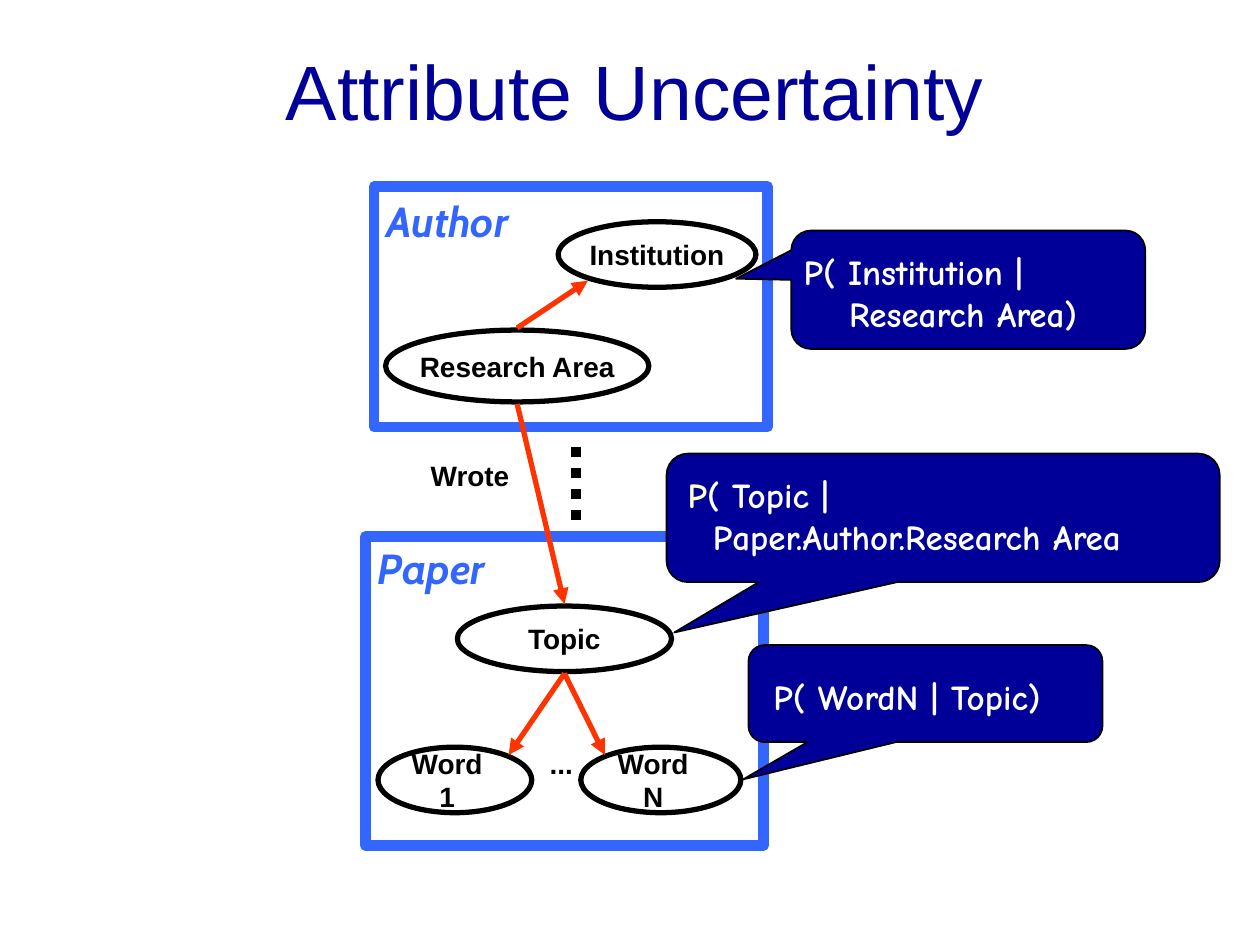
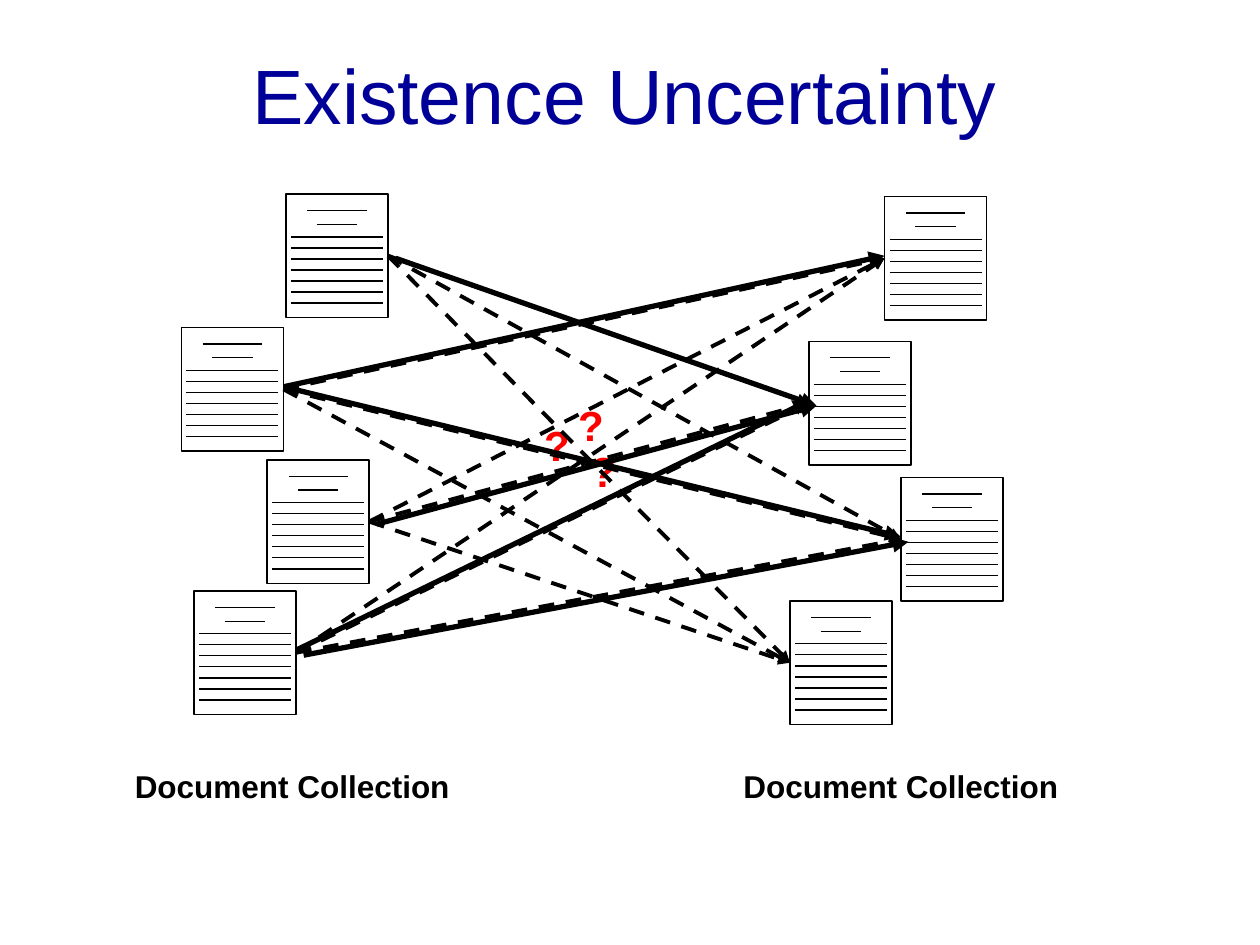
from itertools import permutations

from lxml import etree
from pptx import Presentation
from pptx import util as u
from pptx.dml.color import RGBColor
from pptx.enum import dml, shapes, text
from pptx.oxml.ns import qn

NAVY, BLUE, ORANGE, RED = "000099", "3366FF", "FF3300", "FF0000"
BLACK, WHITE, CREAM = "000000", "FFFFFF", "FFFFCC"
LEFT, CENTER = text.PP_ALIGN.LEFT, text.PP_ALIGN.CENTER
DASH, DOT = dml.MSO_LINE.DASH, dml.MSO_LINE.ROUND_DOT

FRAMES = [
    ("Paper", (2.9, 4.26, 3.16, 2.45), 4.26),
    ("Author", (2.97, 1.48, 3.12, 1.91), 1.5),
]
NODES = {
    "Institution": (4.43, 1.76, 1.57, 0.52),
    "Research Area": (3.06, 2.62, 2.09, 0.57),
    "Topic": (3.63, 4.81, 1.7, 0.52),
    "Word\v1": (3, 5.93, 1.22, 0.52),
    "Word\vN": (4.61, 5.93, 1.27, 0.52),
}
TOP, BOTTOM = (0.5, -0.03), (0.5, 1.03)
DEPENDENCIES = [
    ("Research Area", TOP, "Institution", (0.15, 0.9)),
    ("Research Area", BOTTOM, "Topic", TOP),
    ("Topic", BOTTOM, "Word\v1", (0.85, 0.12)),
    ("Topic", BOTTOM, "Word\vN", (0.15, 0.12)),
]
LABELS = [("Wrote", (3.32, 3.59, 1.16, 0.37), LEFT), ("...", (4.26, 5.88, 0.39, 0.37), CENTER)]
CALLOUTS = [
    ((5.94, 5.12, 2.81, 0.77), (-0.515, 0.884), (6.04, 5.31), ["P( WordN | Topic)"], 0),
    ((5.29, 3.6, 4.39, 1.02), (-0.486, 0.892), (5.36, 3.71),
     ["P( Topic |", "Paper.Author.Research Area"], 0.2),
    ((6.28, 1.83, 2.81, 0.94), (-0.656, -0.093), (6.28, 1.94),
     ["P( Institution |", "Research Area)"], 0.36),
]

PAGE_WIDTH, PAGE_HEIGHT = 0.81, 0.98
LEFT_PAGES = [(2.27, 1.54), (1.44, 2.6), (2.12, 3.65), (1.54, 4.69)]
RIGHT_PAGES = [(7.02, 1.56), (6.42, 2.71), (7.15, 3.79), (6.27, 4.77)]
PAGE_RULES = [(0.13, 0.47), (0.24, 0.32)] + [(0.34 + 0.0875 * row, 0.73) for row in range(7)]
QUESTION_MARKS = [(4.22, 3.28), (4.49, 3.12), (4.59, 3.49)]
COLLECTIONS = [(0.97, "Document Collection"), (5.8, "Document Collection")]
KNOWN_LINKS = [
    ((0.06, 0.02), [(0, 1), (2, 1), (3, 2)]),
    ((0, -0.02), [(1, 0), (1, 2), (3, 1)]),
]


def rgb(color):
    return RGBColor.from_string(color)


def inches(values):
    return [u.Inches(value) for value in values]


def write(shape, lines, size, color, font="Arial", align=CENTER, bold=True, italic=False,
          wrap=False, anchor=text.MSO_ANCHOR.TOP, indent=0):
    frame = shape.text_frame
    frame.text = "\n".join(lines)
    frame.word_wrap = wrap
    frame.vertical_anchor = anchor
    for number, paragraph in enumerate(frame.paragraphs):
        paragraph.alignment = align
        paragraph.font.name, paragraph.font.size = font, u.Pt(size)
        paragraph.font.bold, paragraph.font.italic = bold, italic
        paragraph.font.color.rgb = rgb(color)
        if number and indent:
            paragraph._p.get_or_add_pPr().set("marL", str(u.Inches(indent)))
    return frame


def add_text(slide, box, lines, size, color, **style):
    return write(slide.shapes.add_textbox(*inches(box)), lines, size, color, **style)


def add_box(slide, kind, box, line, width, fill=None):
    shape = slide.shapes.add_shape(kind, *inches(box))
    shape.shadow.inherit = False
    if fill:
        shape.fill.solid()
        shape.fill.fore_color.rgb = rgb(fill)
    else:
        shape.fill.background()
    shape.line.color.rgb = rgb(line)
    shape.line.width = u.Pt(width)
    return shape


def add_line(slide, start, end, color, width, dash=None, arrow=False):
    connector = slide.shapes.add_connector(shapes.MSO_CONNECTOR.STRAIGHT, *inches(start + end))
    connector.line.color.rgb = rgb(color)
    connector.line.width = u.Pt(width)
    if dash:
        connector.line.dash_style = dash
    properties = connector._element.spPr
    if arrow:
        etree.SubElement(properties.find(qn("a:ln")), qn("a:tailEnd"), type="triangle")
    etree.SubElement(properties, qn("a:effectLst"))
    return connector


def add_titled_slide(presentation, title, box):
    slide = presentation.slides.add_slide(presentation.slide_layouts[6])
    add_text(slide, box, [title], 44, NAVY, bold=False, wrap=True, anchor=text.MSO_ANCHOR.MIDDLE)
    return slide


def point_on(box, share):
    left, top, width, height = box
    return left + width * share[0], top + height * share[1]


def build_attribute_slide(presentation):
    slide = add_titled_slide(presentation, "Attribute Uncertainty", (0.33, 0.17, 9.42, 1.08))
    for name, box, label_top in FRAMES:
        add_box(slide, shapes.MSO_SHAPE.RECTANGLE, box, BLUE, 6)
        add_text(slide, (box[0], label_top, 2, 0.5), [name], 24, BLUE, font="Cabin",
                 align=LEFT, italic=True)
    for name, box in NODES.items():
        node = add_box(slide, shapes.MSO_SHAPE.OVAL, box, BLACK, 3)
        frame = write(node, [name], 16, BLACK, anchor=text.MSO_ANCHOR.MIDDLE)
        if "\v" in name:
            frame.margin_right = u.Inches(0.22)
    for label, box, align in LABELS:
        add_text(slide, box, [label], 16, BLACK, align=align)
    add_line(slide, (4.57, 4.13), (4.57, 3.5), BLACK, 6, DOT)
    for source, source_share, target, target_share in DEPENDENCIES:
        add_line(slide, point_on(NODES[source], source_share),
                 point_on(NODES[target], target_share), ORANGE, 3, arrow=True)
    for box, tip, corner, lines, indent in CALLOUTS:
        callout = add_box(slide, shapes.MSO_SHAPE.ROUNDED_RECTANGULAR_CALLOUT, box, BLACK, 1, NAVY)
        callout.adjustments[0], callout.adjustments[1] = tip
        frame = add_text(slide, corner + (box[2] - 0.1, 0.4 * len(lines)), lines, 20, WHITE,
                         font="Comic Neue", align=LEFT, indent=indent)
        if "Topic |" in lines[0]:
            paragraph = frame.paragraphs[0]
            paragraph.runs[0].text = "P"
            paragraph.runs[0].font.color.rgb = rgb(CREAM)
            paragraph.add_run().text = lines[0][1:]


def add_page(slide, corner):
    left, top = corner
    page = add_box(slide, shapes.MSO_SHAPE.RECTANGLE, (left, top, PAGE_WIDTH, PAGE_HEIGHT),
                   BLACK, 0.75, WHITE)
    for offset, width in PAGE_RULES:
        start = left + (PAGE_WIDTH - width) / 2
        add_line(slide, (start, top + offset), (start + width, top + offset), BLACK, 0.75)
    return page


def build_existence_slide(presentation):
    slide = add_titled_slide(presentation, "Existence Uncertainty", (0.25, 0.33, 9.42, 0.83))
    for left, label in COLLECTIONS:
        add_text(slide, (left, 6.04, 2.7, 0.4), [label], 18, BLACK)
    for corner in QUESTION_MARKS:
        add_text(slide, corner + (0.4, 0.5), ["?"], 24, RED)
    sources = [add_page(slide, corner) for corner in LEFT_PAGES]
    targets = [add_page(slide, corner) for corner in RIGHT_PAGES]
    for source, target in permutations(range(len(sources)), 2):
        link = add_line(slide, (0, 0), (1, 1), BLACK, 2.25, DASH, arrow=True)
        link.begin_connect(sources[source], 3)
        link.end_connect(targets[target], 1)
    for (shift_x, shift_y), links in KNOWN_LINKS:
        for source, target in links:
            start_x, start_y = LEFT_PAGES[source]
            end_x, end_y = RIGHT_PAGES[target]
            middle = PAGE_HEIGHT / 2 + shift_y
            add_line(slide, (start_x + PAGE_WIDTH + shift_x, start_y + middle),
                     (end_x + shift_x, end_y + middle), BLACK, 3, arrow=True)


def main():
    presentation = Presentation()
    presentation.slide_width, presentation.slide_height = inches((10, 7.5))
    build_attribute_slide(presentation)
    build_existence_slide(presentation)
    presentation.save("out.pptx")


if __name__ == "__main__":
    main()
